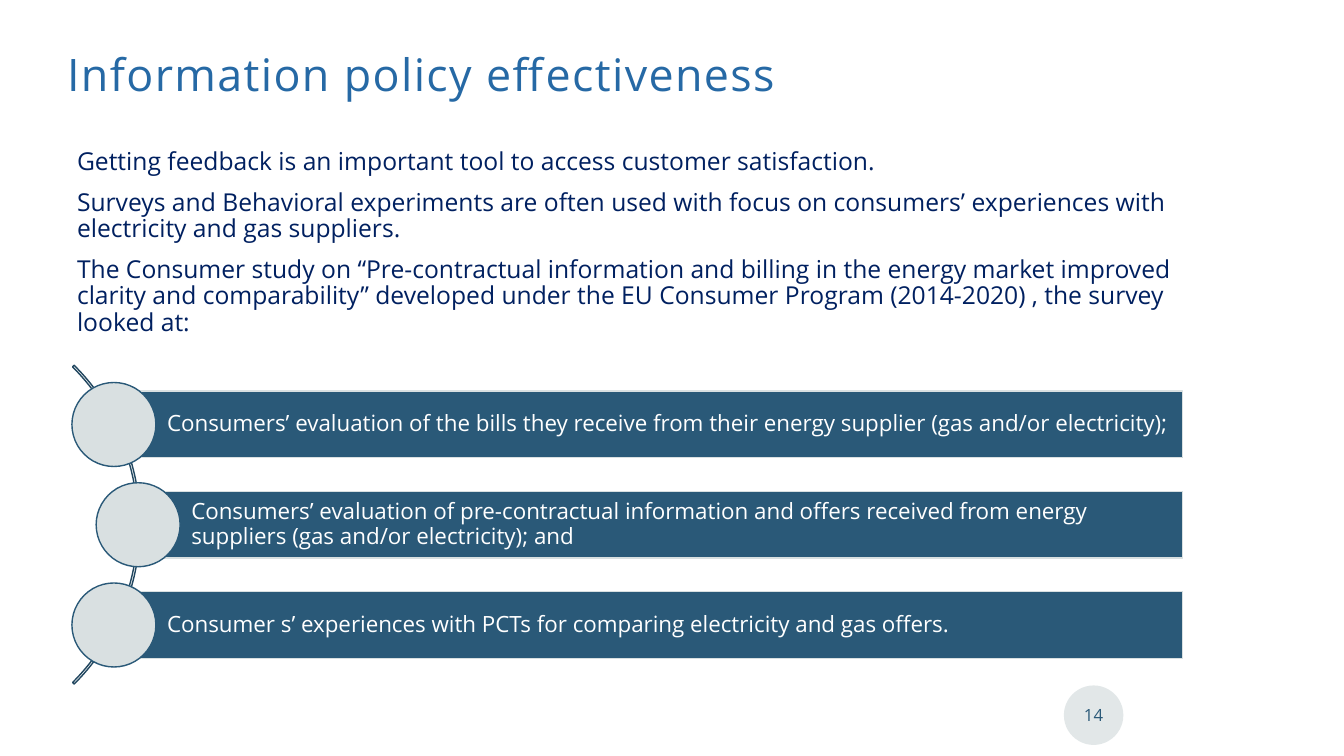
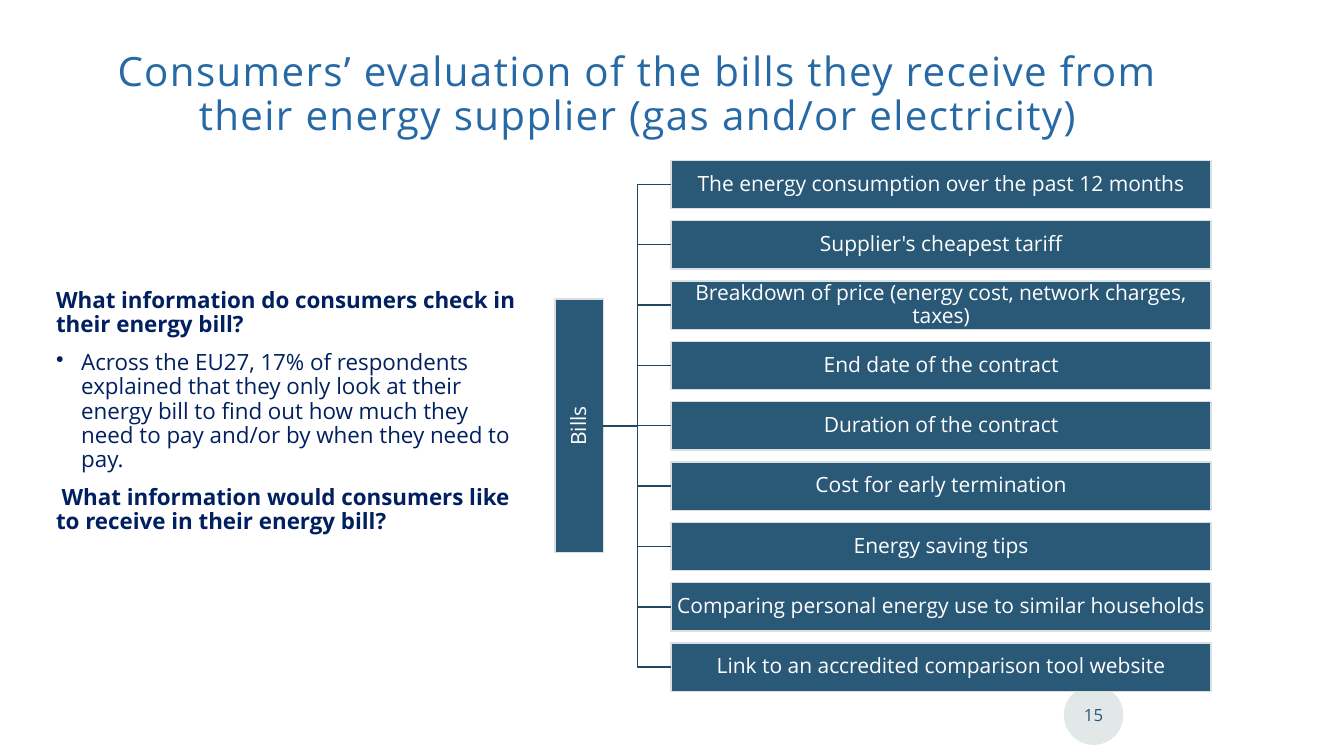
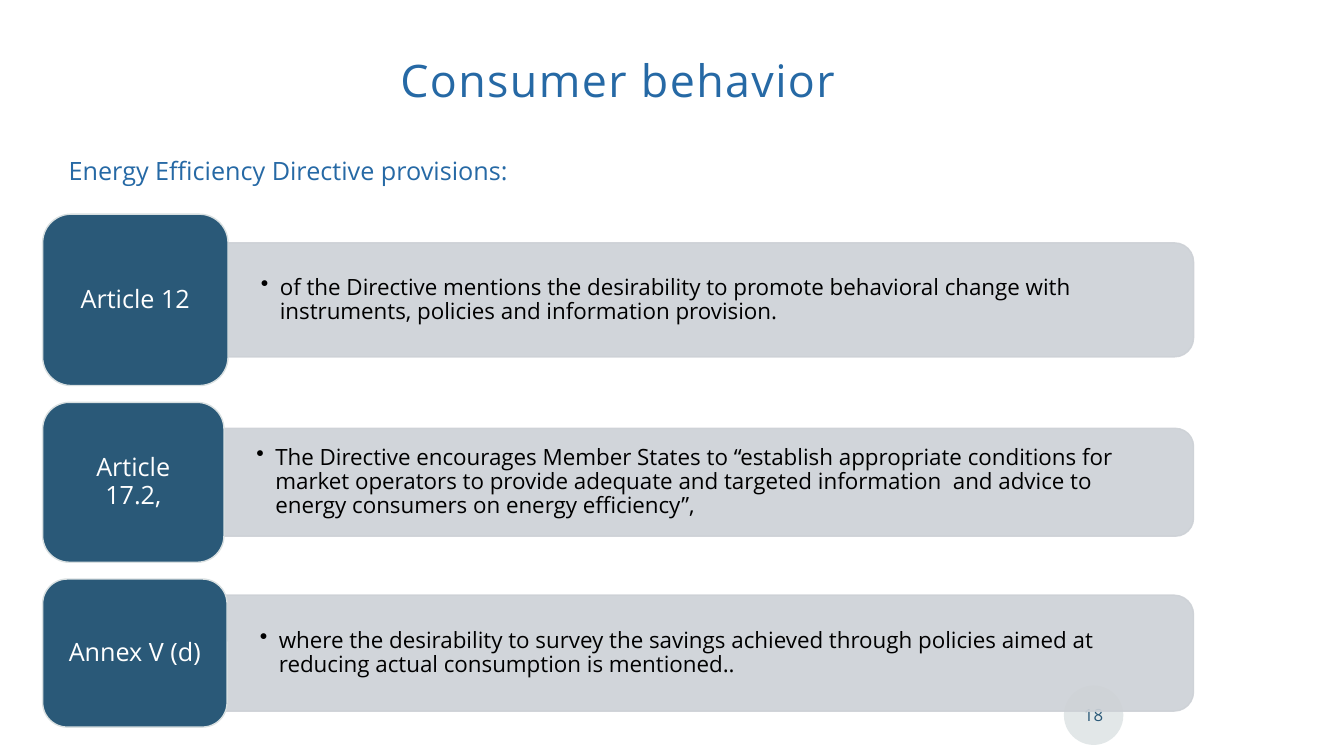
from dataclasses import dataclass

from lxml import etree
from pptx import Presentation
from pptx.dml.color import RGBColor
from pptx.enum.shapes import MSO_CONNECTOR, MSO_SHAPE
from pptx.enum.text import MSO_ANCHOR, MSO_AUTO_SIZE, PP_ALIGN
from pptx.oxml.ns import qn
from pptx.util import Pt

LEFT, CENTER = PP_ALIGN.LEFT, PP_ALIGN.CENTER
TOP, MIDDLE = MSO_ANCHOR.TOP, MSO_ANCHOR.MIDDLE
RECT, OVAL = MSO_SHAPE.RECTANGLE, MSO_SHAPE.OVAL
ROUNDED, ARC = MSO_SHAPE.ROUNDED_RECTANGLE, MSO_SHAPE.BLOCK_ARC
ELBOW = MSO_CONNECTOR.ELBOW
NO_AUTOFIT = MSO_AUTO_SIZE.NONE
LEFT_SITE, RIGHT_SITE = 1, 3


@dataclass(frozen=True)
class Theme:
    font: str = "Open Sans"
    heading: str = "2669A5"
    body: str = "002060"
    panel: str = "2A5978"
    branch: str = "224760"
    pale: str = "D9E0E1"
    bar: str = "CDD1D6"
    white: str = "FFFFFF"
    black: str = "000000"
    title_size: float = 32
    long_title_size: float = 28.8
    subheading_size: float = 18
    intro_size: float = 17.6
    text_size: float = 16
    box_size: float = 15
    page_size: float = 12


THEME = Theme()


def write(frame, text, size, color, bold=False, align=LEFT, spacing=0.9,
          before=0, margin=0, first_line=0, bullet=None, tracking=0):
    """Add one paragraph to the frame, filling its empty first paragraph if any."""
    frame.word_wrap = True
    paragraph = frame.add_paragraph() if frame.text else frame.paragraphs[0]
    properties = paragraph._p.get_or_add_pPr()
    properties.set("marL", str(Pt(margin)))
    properties.set("indent", str(Pt(first_line)))
    if bullet:
        etree.SubElement(properties, qn("a:buChar")).set("char", bullet)
    paragraph.alignment = align
    paragraph.line_spacing = spacing
    paragraph.space_before = Pt(before)
    run = paragraph.add_run()
    run.text = text
    run.font.name = THEME.font
    run.font.size = Pt(size)
    run.font.bold = bold
    run.font.color.rgb = RGBColor.from_string(color)
    if tracking:
        run._r.get_or_add_rPr().set("spc", str(tracking * 100))


def add_block(slide, kind, left, top, width, height, fill=None, line=None,
              opacity=100, insets=(0, 0, 0, 0)):
    """Add a flat shape; insets run left, top, right, bottom."""
    block = slide.shapes.add_shape(kind, Pt(left), Pt(top), Pt(width), Pt(height))
    block.shadow.inherit = False
    if fill:
        block.fill.solid()
        block.fill.fore_color.rgb = RGBColor.from_string(fill)
    else:
        block.fill.background()
    if line:
        block.line.color.rgb = RGBColor.from_string(line)
        block.line.width = Pt(1)
    else:
        block.line.fill.background()
    if opacity < 100:
        for color in block._element.spPr.iter(qn("a:srgbClr")):
            etree.SubElement(color, qn("a:alpha")).set("val", str(opacity * 1000))
    frame = block.text_frame
    frame.vertical_anchor = MIDDLE
    (frame.margin_left, frame.margin_top,
     frame.margin_right, frame.margin_bottom) = [Pt(inset) for inset in insets]
    return block


deck = Presentation()
deck.slide_width, deck.slide_height = Pt(960.5), Pt(540)
title_only = deck.slide_layouts[5]

# Shared frame: page badge and title
pages = [
    ("14", "Information policy effectiveness", 48, 37.5, THEME.title_size, LEFT),
    ("15", "Consumers’ evaluation of the bills they receive from their energy "
     "supplier (gas and/or electricity)", 49, 37, THEME.long_title_size, CENTER),
    ("18", "Consumer behavior", 34.5, 42, THEME.title_size, CENTER),
]
slides = []
for number, heading, left, top, size, align in pages:
    slide = deck.slides.add_slide(title_only)
    slides.append(slide)
    badge = add_block(slide, OVAL, 760.3, 489.6, 42.5, 42.5, THEME.pale, opacity=75)
    write(badge.text_frame, number, THEME.page_size, THEME.panel,
          align=CENTER, spacing=1)
    title = slide.shapes.title
    title.left, title.top, title.width, title.height = Pt(left), Pt(top), Pt(814), Pt(66)
    frame = title.text_frame
    frame.auto_size = NO_AUTOFIT
    frame.vertical_anchor = TOP
    frame.margin_left = frame.margin_top = frame.margin_right = frame.margin_bottom = 0
    write(frame, heading, size, THEME.heading, align=align, tracking=1)
policy, bills, behavior = slides

# Information policy effectiveness
intro = policy.shapes.add_textbox(Pt(48), Pt(103), Pt(800), Pt(167)).text_frame
intro_texts = [
    "Getting feedback is an important tool to access customer satisfaction.",
    "Surveys and Behavioral experiments are often used with focus on consumers’ "
    "experiences with electricity and gas suppliers.",
    "The Consumer study on “Pre-contractual information and billing in the energy "
    "market improved clarity and comparability” developed under the EU Consumer "
    "Program (2014-2020) , the survey looked at:",
]
for index, text in enumerate(intro_texts):
    write(intro, text, THEME.intro_size, THEME.body, before=10 if index else 0)

arc = add_block(policy, ARC, -221.8, 213.8, 322, 322, line=THEME.branch)
for index, value in enumerate((189, 27, 0.005)):
    arc.adjustments[index] = value

topic_right, topic_height, topic_pitch, dot = 845.3, 47.6, 71.6, 60
topics = [
    (81.4, "Consumers’ evaluation of the bills they receive from their energy "
     "supplier (gas and/or electricity);"),
    (98.7, "Consumers’ evaluation of pre-contractual information and offers received "
     "from energy suppliers (gas and/or electricity); and"),
    (81.4, "Consumer s’ experiences with PCTs for comparing electricity and gas offers."),
]
for index, (left, text) in enumerate(topics):
    top = 279.4 + index * topic_pitch
    topic = add_block(policy, RECT, left, top, topic_right - left, topic_height,
                      THEME.panel, THEME.pale, insets=(38, 3, 3, 3))
    write(topic.text_frame, text, THEME.text_size, THEME.white)
    add_block(policy, OVAL, left - dot / 2, top + (topic_height - dot) / 2, dot, dot,
              THEME.pale, THEME.panel)

# Consumers' evaluation of the bills
questions = bills.shapes.add_textbox(Pt(33), Pt(203), Pt(346), Pt(202)).text_frame
write(questions, "What information do consumers check in their energy bill?",
      THEME.text_size, THEME.body, bold=True)
write(questions, "Across the EU27, 17% of respondents explained that they only look at "
      "their energy bill to find out how much they need to pay and/or by when they "
      "need to pay.", THEME.text_size, THEME.body, before=10, margin=18,
      first_line=-18, bullet="•")
write(questions, "What information would consumers like to receive in their energy bill?",
      THEME.text_size, THEME.body, bold=True, before=10, first_line=4)

bill_items = [
    "The energy consumption over the past 12 months",
    "Supplier's cheapest tariff",
    "Breakdown of price (energy cost, network charges, taxes)",
    "End date of the contract",
    "Duration of the contract",
    "Cost for early termination",
    "Energy saving tips",
    "Comparing personal energy use to similar households",
    "Link to an accredited comparison tool website",
]
item_top, item_pitch, item_height, root_height = 114.5, 43.1, 34.5, 181.4
items_middle = item_top + ((len(bill_items) - 1) * item_pitch + item_height) / 2
root = add_block(bills, RECT, 396.7, items_middle - root_height / 2, 34.5, root_height,
                 THEME.panel, THEME.pale)
root.text_frame._txBody.bodyPr.set("vert", "vert270")
write(root.text_frame, "Bills", THEME.box_size, THEME.white, align=CENTER)
for index, text in enumerate(bill_items):
    item = add_block(bills, RECT, 479.6, item_top + index * item_pitch, 386, item_height,
                     THEME.panel, THEME.pale, insets=(1, 1, 1, 1))
    write(item.text_frame, text, THEME.box_size, THEME.white, align=CENTER)
    branch = bills.shapes.add_connector(ELBOW, 0, 0, 0, 0)
    branch.begin_connect(root, RIGHT_SITE)
    branch.end_connect(item, LEFT_SITE)
    branch.line.color.rgb = RGBColor.from_string(THEME.branch)
    branch.line.width = Pt(1)
    etree.SubElement(branch._element.spPr, qn("a:effectLst"))

# Consumer behavior
subheading = behavior.shapes.add_textbox(Pt(42), Pt(107.3), Pt(881), Pt(29)).text_frame
write(subheading, "Energy Efficiency Directive provisions:", THEME.subheading_size,
      THEME.heading, spacing=1)

provisions = [
    ("Article 12", 132.5, 122.4, 81.4,
     "of the Directive mentions the desirability to promote behavioral change with "
     "instruments, policies and information provision."),
    ("Article 17.2,", 129.6, 114.2, 77,
     "The Directive encourages Member States to “establish appropriate conditions for "
     "market operators to provide adequate and targeted information  and advice to "
     "energy consumers on energy efficiency”,"),
    ("Annex V (d)", 131.8, 105.8, 82.8,
     "where the desirability to survey the savings achieved through policies aimed at "
     "reducing actual consumption is mentioned.."),
]
label_left, label_top, label_gap, bar_right, overlap = 30.5, 153, 12, 853, 20
for name, label_width, label_height, bar_height, text in provisions:
    bar_left = label_left + label_width - overlap
    bar = add_block(behavior, ROUNDED, bar_left, label_top + (label_height - bar_height) / 2,
                    bar_right - bar_left, bar_height, THEME.bar, THEME.bar, opacity=90,
                    insets=(overlap + 19.5, 10, 24, 10))
    write(bar.text_frame, text, THEME.text_size, THEME.black, margin=13.5,
          first_line=-13.5, bullet="•")
    label = add_block(behavior, ROUNDED, label_left, label_top, label_width, label_height,
                      THEME.panel, THEME.pale, insets=(11, 9, 11, 9))
    write(label.text_frame, name, THEME.subheading_size, THEME.white, align=CENTER)
    label_top += label_height + label_gap

deck.save("out.pptx")
